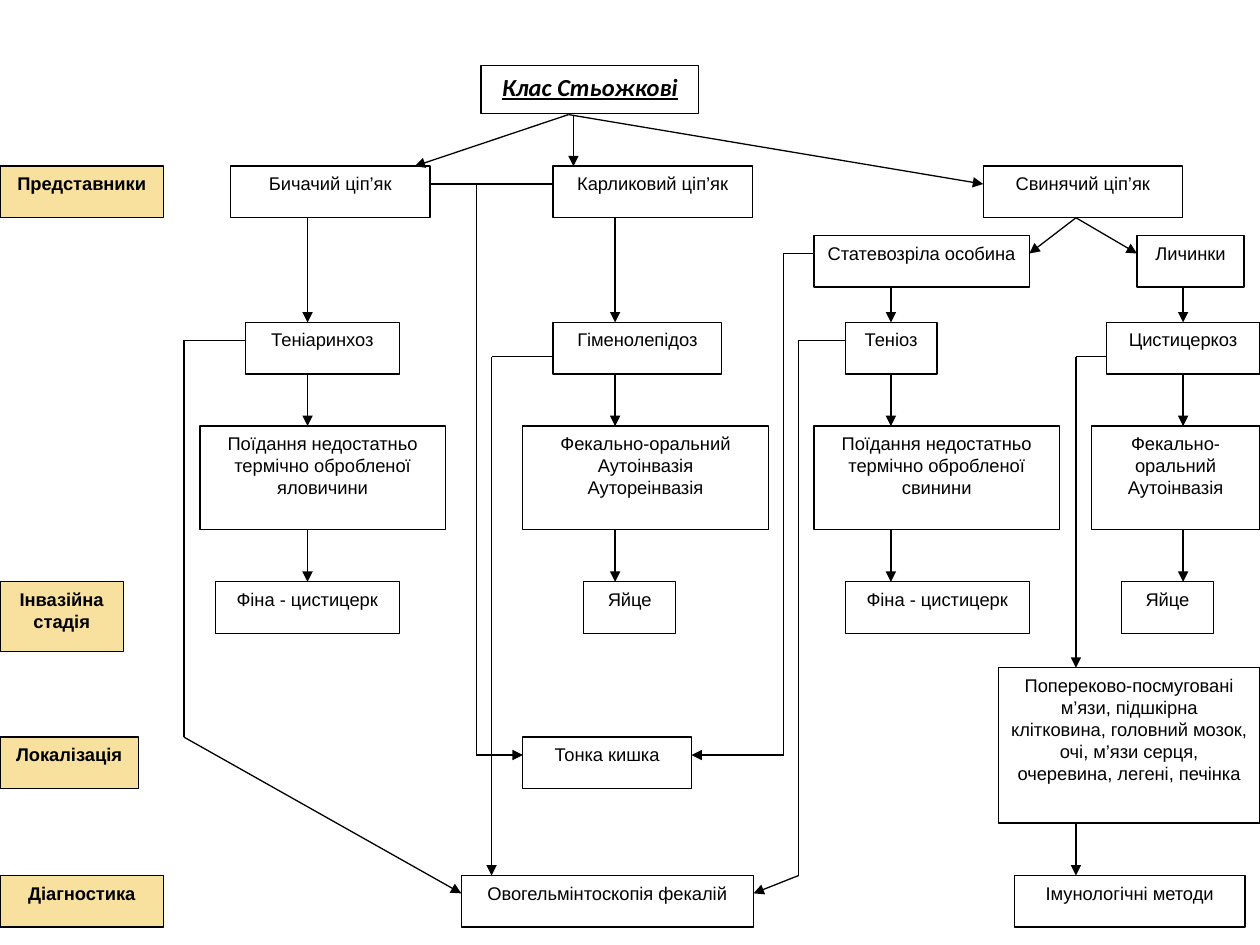
import itertools

import pptx
import pptx.dml.color
import pptx.enum.shapes
import pptx.enum.text
import pptx.oxml
import pptx.oxml.ns
import pptx.util

Cm = pptx.util.Cm
Pt = pptx.util.Pt


def colour(hex_text):
    return pptx.dml.color.RGBColor.from_string(hex_text)


class Chart:
    """Style of the flow chart and the slide it is drawn on."""

    ink = "000000"
    paper = "FFFFFF"
    label_fill = "F8E19F"
    line_width = Pt(0.75)
    font = "Arial"
    size = 10.5

    def __init__(self, page):
        self.page = page

    def box(self, text, left, top, width, height, fill=paper, bold=False):
        box = self.page.shapes.add_shape(
            pptx.enum.shapes.MSO_SHAPE.RECTANGLE,
            Cm(left), Cm(top), Cm(width), Cm(height))
        box.shadow.inherit = False
        box.fill.solid()
        box.fill.fore_color.rgb = colour(fill)
        box.line.color.rgb = colour(self.ink)
        box.line.width = self.line_width
        frame = box.text_frame
        frame.word_wrap = True
        frame.vertical_anchor = pptx.enum.text.MSO_ANCHOR.TOP
        frame.text = text
        for para in frame.paragraphs:
            para.alignment = pptx.enum.text.PP_ALIGN.CENTER
            for span in para.runs:
                span.font.name = self.font
                span.font.size = Pt(self.size)
                span.font.bold = bold
                span.font.color.rgb = colour(self.ink)
        return box

    def label(self, text, top, width, height):
        return self.box(text, 0, top, width, height, self.label_fill, bold=True)

    def title(self, text, left, top, width, height):
        box = self.box(text, left, top, width, height, bold=True)
        para = box.text_frame.paragraphs[0]
        para.space_after = Pt(10)
        font = para.runs[0].font
        font.name = "Calibri"
        font.size = Pt(14)
        font.italic = True
        font.underline = True
        return box

    def line(self, start, end, arrow=False):
        line = self.page.shapes.add_connector(
            pptx.enum.shapes.MSO_CONNECTOR.STRAIGHT,
            Cm(start[0]), Cm(start[1]), Cm(end[0]), Cm(end[1]))
        line.line.color.rgb = colour(self.ink)
        line.line.width = self.line_width
        if arrow:
            tail = pptx.oxml.ns.qn("a:tailEnd")
            line.line._get_or_add_ln().makeelement(tail)
            pptx.oxml.parse_xml  # parser shared with the shapes
            stroke = line.line._get_or_add_ln()
            stroke.append(stroke.makeelement(tail, {"type": "triangle"}))
        properties = line._element.spPr
        properties.append(properties.makeelement(pptx.oxml.ns.qn("a:effectLst")))

    def route(self, *points):
        """Joined lines with an arrowhead at the last point."""
        pairs = list(itertools.pairwise(points))
        for number, (start, end) in enumerate(pairs, 1):
            self.line(start, end, arrow=number == len(pairs))


# Rows, heights and the four columns of vertical arrows, in centimetres
SPECIES, FORM, DISEASE, INFECTION = 3.35, 4.75, 6.5, 8.59
STAGE, PLACE, DIAGNOSIS = 11.73, 14.86, 17.65
LOW, TALL = 1.04, 2.09
MIDDLE = 0.36
COLUMNS = BEEF, DWARF, PORK, LARVA = 6.2, 12.4, 17.96, 23.85
TISSUE_TOP, TISSUE_HEIGHT, TISSUE_X = 13.46, 3.13, 21.69

LABELS = [
    ("Представники", SPECIES, 3.3, LOW),
    ("Локалізація", PLACE, 2.79, LOW),
    ("Інвазійна стадія", STAGE, 2.49, 1.4),
    ("Діагностика", DIAGNOSIS, 3.3, LOW),
]

# Text, left, top, width, height
BOXES = [
    ("Бичачий ціп’як", 4.65, SPECIES, 4.02, LOW),
    ("Карликовий ціп’як", 11.15, SPECIES, 4.02, LOW),
    ("Свинячий ціп’як", 19.82, SPECIES, 4.02, LOW),
    ("Статевозріла особина", 16.41, FORM, 4.34, LOW),
    ("Личинки", 22.92, FORM, 2.16, LOW),
    ("Теніаринхоз", 4.95, DISEASE, 3.1, LOW),
    ("Гіменолепідоз", 11.15, DISEASE, 3.4, LOW),
    ("Теніоз", 17.04, DISEASE, 1.85, LOW),
    ("Цистицеркоз", 22.3, DISEASE, 3.1, LOW),
    ("Поїдання недостатньо термічно обробленої яловичини",
     4.03, INFECTION, 4.95, TALL),
    ("Фекально-оральний\nАутоінвазія\nАутореінвазія",
     10.54, INFECTION, 4.95, TALL),
    ("Поїдання недостатньо термічно обробленої свинини",
     16.41, INFECTION, 4.95, TALL),
    ("Фекально-\nоральний\nАутоінвазія", 22, INFECTION, 3.4, TALL),
    ("Фіна - цистицерк", 4.34, STAGE, 3.71, LOW),
    ("Яйце", 11.77, STAGE, 1.85, LOW),
    ("Фіна - цистицерк", 17.04, STAGE, 3.71, LOW),
    ("Яйце", 22.61, STAGE, 1.85, LOW),
    ("Тонка кишка", 10.54, PLACE, 3.4, LOW),
    ("Попереково-посмуговані м’язи, підшкірна клітковина, головний мозок, "
     "очі, м’язи серця, очеревина, легені, печінка",
     20.13, TISSUE_TOP, 5.27, TISSUE_HEIGHT),
    ("Овогельмінтоскопія фекалій", 9.3, DIAGNOSIS, 5.89, LOW),
    ("Імунологічні методи", 20.45, DIAGNOSIS, 4.65, LOW),
]


def main():
    deck = pptx.Presentation()
    deck.slide_width, deck.slide_height = Cm(25.4), Cm(19.05)
    chart = Chart(deck.slides.add_slide(deck.slide_layouts[6]))

    # Boxes
    for label in LABELS:
        chart.label(*label)
    for box in BOXES:
        chart.box(*box)

    # Class to species, pork tapeworm to its forms
    chart.route((11.46, 2.31), (8.36, SPECIES))
    chart.route((11.56, 2.31), (11.56, SPECIES))
    chart.route((11.46, 2.31), (19.82, SPECIES + MIDDLE))
    for x in (20.75, 22.92):
        chart.route((TISSUE_X, SPECIES + LOW), (x, FORM + MIDDLE))

    # Vertical arrows down each column
    for x, source in zip(COLUMNS, (SPECIES, SPECIES, FORM, FORM)):
        chart.route((x, source + LOW), (x, DISEASE))
        chart.route((x, DISEASE + LOW), (x, INFECTION))
        chart.route((x, INFECTION + TALL), (x, STAGE))

    # Species and adult form to the small intestine
    species_y, place_y = SPECIES + MIDDLE, PLACE + MIDDLE
    chart.line((8.67, species_y), (11.15, species_y))
    chart.route((9.6, species_y), (9.6, place_y), (10.54, place_y))
    chart.route((16.41, FORM + MIDDLE), (15.8, FORM + MIDDLE),
                (15.8, place_y), (13.94, place_y))

    # Diseases to diagnosis
    upper_y, lower_y = DISEASE + MIDDLE, DISEASE + 0.69
    diagnosis_y = DIAGNOSIS + MIDDLE
    chart.route((4.95, upper_y), (3.71, upper_y), (3.71, PLACE),
                (9.3, diagnosis_y))
    chart.route((17.04, upper_y), (16.1, upper_y), (16.1, DIAGNOSIS),
                (15.19, diagnosis_y))
    chart.route((11.15, lower_y), (9.91, lower_y), (9.91, DIAGNOSIS))
    chart.route((22.3, lower_y), (TISSUE_X, lower_y), (TISSUE_X, TISSUE_TOP))
    chart.route((TISSUE_X, TISSUE_TOP + TISSUE_HEIGHT), (TISSUE_X, DIAGNOSIS))

    # Heading
    chart.title("Клас Стьожкові", 9.7, 1.32, 4.39, 0.97)

    deck.save("out.pptx")


if __name__ == "__main__":
    main()
